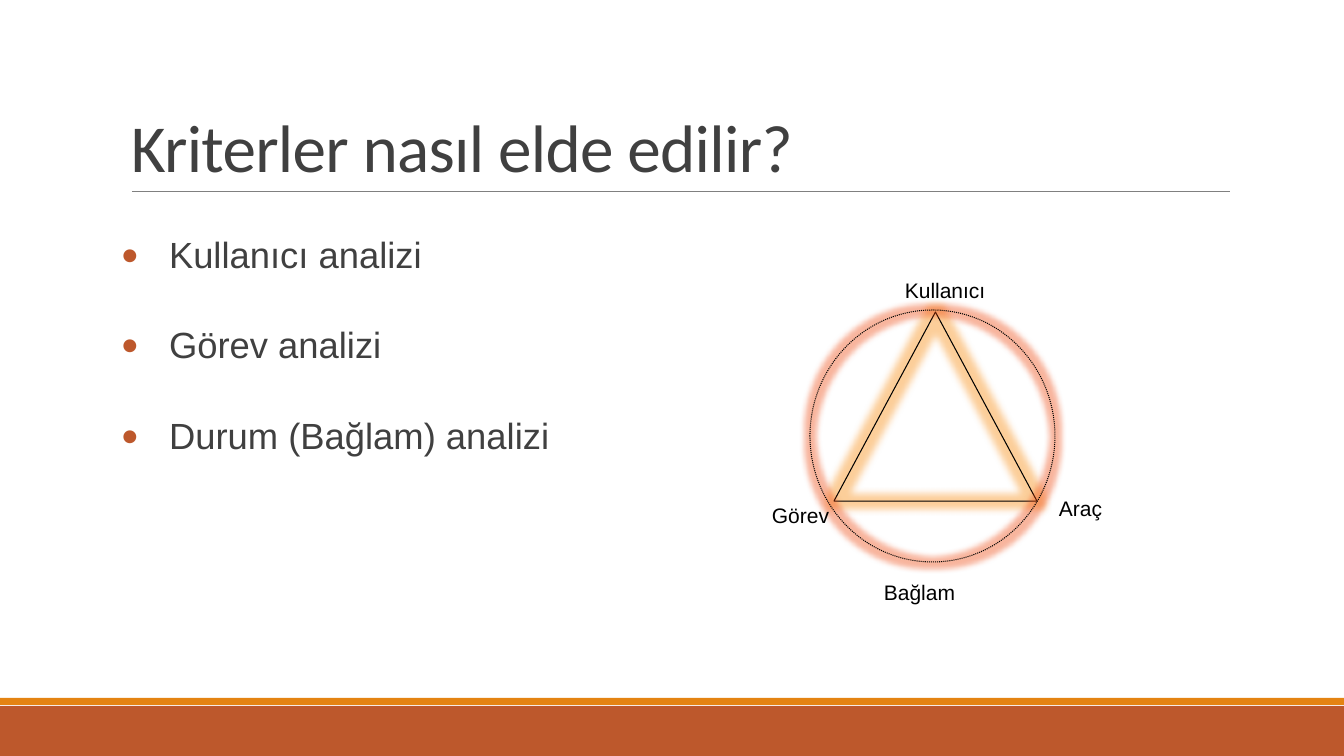
from lxml import etree
from pptx import Presentation
from pptx.dml.color import RGBColor
from pptx.enum.dml import MSO_LINE
from pptx.enum.shapes import MSO_CONNECTOR, MSO_SHAPE
from pptx.enum.text import MSO_ANCHOR, MSO_AUTO_SIZE
from pptx.oxml.ns import qn
from pptx.util import Emu, Pt

RECTANGLE = MSO_SHAPE.RECTANGLE
TRIANGLE = MSO_SHAPE.ISOSCELES_TRIANGLE
OVAL = MSO_SHAPE.OVAL
STRAIGHT = MSO_CONNECTOR.STRAIGHT
DOTTED = MSO_LINE.ROUND_DOT
BOTTOM = MSO_ANCHOR.BOTTOM
TOP = MSO_ANCHOR.TOP
GROW = MSO_AUTO_SIZE.SHAPE_TO_FIT_TEXT

RUST = RGBColor(0xBD, 0x58, 0x2C)
ORANGE = RGBColor(0xE4, 0x83, 0x12)
GRAY = RGBColor(0x80, 0x80, 0x80)
CHARCOAL = RGBColor(0x40, 0x40, 0x40)
BLACK = RGBColor(0x00, 0x00, 0x00)
AMBER_GLOW = RGBColor(0xF8, 0x85, 0x00)
RED_GLOW = RGBColor(0xEE, 0x46, 0x0C)

ANALYSES = ["Kullanıcı analizi", "Görev analizi", "Durum (Bağlam) analizi"]
LABELS = [
    ("Kullanıcı", 895, 273, 102),
    ("Görev", 762, 498, 79),
    ("Araç", 1049, 491, 64),
    ("Bağlam", 874, 575, 93),
]


def px(count):
    return Emu(round(count * 914400 / 100.8))


def add_element(parent, tag, **attributes):
    return etree.SubElement(parent, qn(tag), attributes)


class SlideBuilder:
    title_font = "Calibri"
    body_font = "Arial"

    def __init__(self, page):
        self.page = page

    def bar(self, top, height, color):
        shape = self.page.shapes.add_shape(RECTANGLE, 0, px(top), px(1344), px(height))
        shape.shadow.inherit = False
        shape.fill.solid()
        shape.fill.fore_color.rgb = color
        shape.line.fill.background()

    def rule(self, left, right, y):
        line = self.page.shapes.add_connector(STRAIGHT, px(left), px(y), px(right), px(y))
        line.line.color.rgb = GRAY
        line.line.width = Pt(0.5)
        add_element(line._element.spPr, "a:effectLst")

    def outline(self, kind, left, top, width, height, glow, radius, dash=None):
        shape = self.page.shapes.add_shape(kind, px(left), px(top), px(width), px(height))
        shape.shadow.inherit = False
        shape.fill.background()
        shape.line.color.rgb = BLACK
        shape.line.width = Pt(0.75)
        if dash is not None:
            shape.line.dash_style = dash
        effects = shape._element.spPr.find(qn("a:effectLst"))
        halo = add_element(effects, "a:glow", rad=str(Pt(radius)))
        color = add_element(halo, "a:srgbClr", val=str(glow))
        add_element(color, "a:alpha", val="40000")

    def text_frame(self, left, top, width, height, anchor=TOP, wrap=True):
        box = self.page.shapes.add_textbox(px(left), px(top), px(width), px(height))
        frame = box.text_frame
        frame.word_wrap = wrap
        frame.vertical_anchor = anchor
        return frame

    def span(self, para, text, size, color, font):
        span = para.add_run()
        span.text = text
        span.font.size = Pt(size)
        span.font.name = font
        span.font.color.rgb = color
        return span

    def title(self, text):
        frame = self.text_frame(121, 31, 1109, 160, anchor=BOTTOM)
        para = frame.paragraphs[0]
        para.line_spacing = 0.85
        span = self.span(para, text, 48, CHARCOAL, self.title_font)
        span.font._element.set("spc", "-50")

    def bullets(self, items):
        frame = self.text_frame(121, 205, 1109, 476)
        frame.margin_left = frame.margin_right = 0
        for index, item in enumerate(items):
            para = frame.add_paragraph() if index else frame.paragraphs[0]
            para.line_spacing = 1.5
            para.space_before = Pt(12)
            para.space_after = Pt(6)
            properties = para._p.get_or_add_pPr()
            properties.set("marL", str(px(48)))
            properties.set("indent", str(-px(48)))
            bullet_color = add_element(properties, "a:buClr")
            add_element(bullet_color, "a:srgbClr", val=str(RUST))
            add_element(properties, "a:buFont", typeface=self.title_font)
            add_element(properties, "a:buChar", char="•")
            self.span(para, item, 26, CHARCOAL, self.body_font)

    def label(self, text, left, top, width):
        frame = self.text_frame(left, top, width, 35, wrap=False)
        frame.auto_size = GROW
        self.span(frame.paragraphs[0], text, 15, BLACK, self.body_font)


def main():
    deck = Presentation()
    deck.slide_width = px(1344)
    deck.slide_height = px(756)
    builder = SlideBuilder(deck.slides.add_slide(deck.slide_layouts[6]))
    builder.bar(706, 50, RUST)
    builder.bar(698, 7, ORANGE)
    builder.rule(132, 1230, 191)
    builder.bullets(ANALYSES)
    builder.title("Kriterler nasıl elde edilir?")
    builder.outline(TRIANGLE, 834, 312, 203, 189, AMBER_GLOW, 11)
    builder.outline(OVAL, 810, 310, 245, 252, RED_GLOW, 8, DOTTED)
    for label in LABELS:
        builder.label(*label)
    deck.save("out.pptx")


if __name__ == "__main__":
    main()
